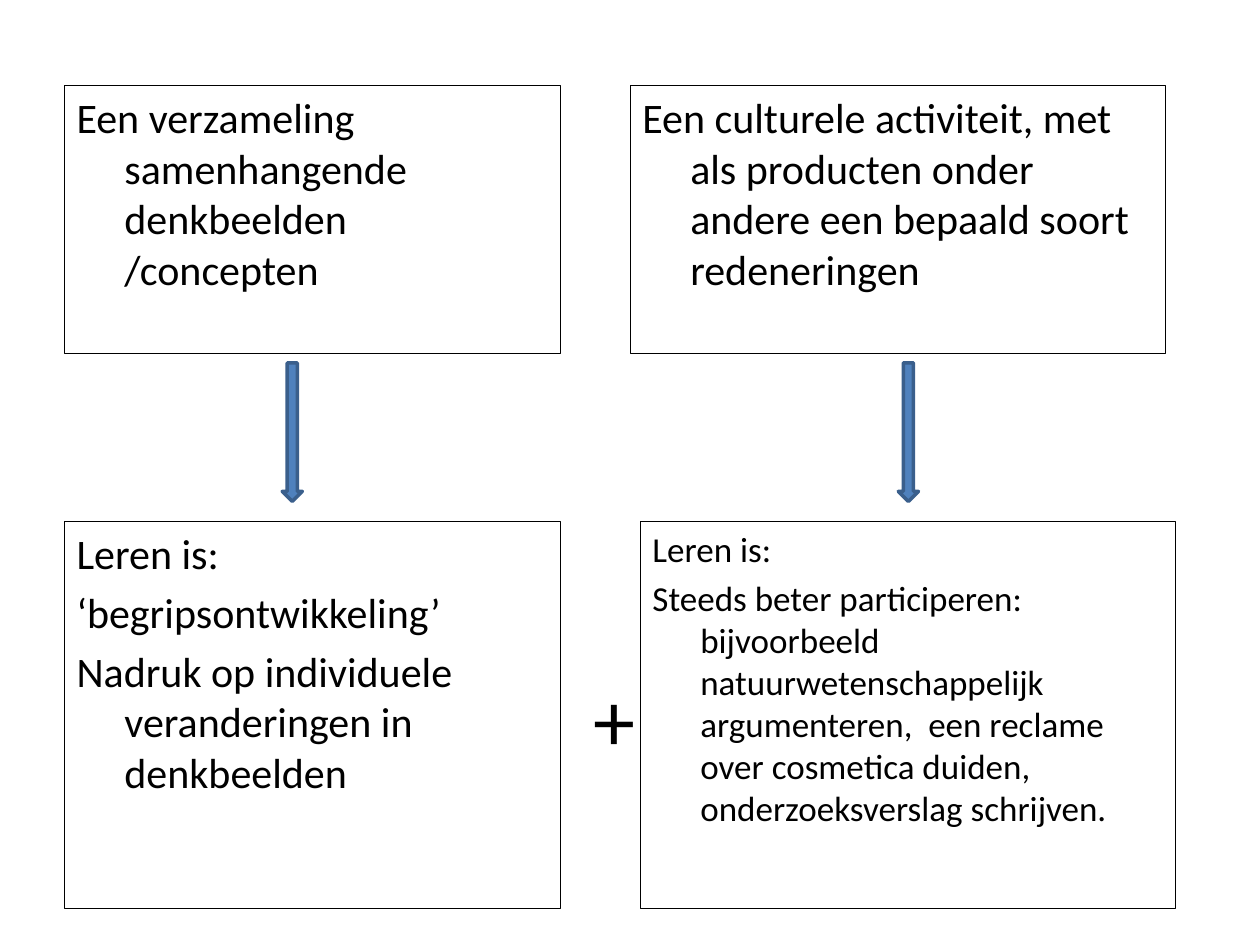
from pptx import Presentation
from pptx.dml.color import RGBColor
from pptx.enum import shapes, text
from pptx.util import Inches, Pt

COLORS = {"ink": "000000", "arrow": "4F81BD", "arrow_edge": "3A5F8C"}
FONT = "Calibri"
HANGING = 0.38

ROWS = {"view": (0.68, 2.13), "learning": (4.14, 3.07)}
STATEMENTS = [
    ("view", 0.51, 3.94, 24,
     ["Een verzameling samenhangende denkbeelden /concepten"]),
    ("view", 5, 4.25, 24,
     ["Een culturele activiteit, met als producten onder andere een bepaald "
      "soort redeneringen"]),
    ("learning", 0.51, 3.94, 24,
     ["Leren is:", "‘begripsontwikkeling’",
      "Nadruk op individuele veranderingen in denkbeelden"]),
    ("learning", 5.08, 4.25, 20,
     ["Leren is:",
      "Steeds beter participeren: bijvoorbeeld natuurwetenschappelijk "
      "argumenteren,  een reclame over cosmetica duiden, "
      "onderzoeksverslag schrijven."]),
]
ARROW_LEFTS = [2.24, 7.13]


def color(name):
    return RGBColor.from_string(COLORS[name])


def write(part, paragraphs, size, hanging=0, space_before=0):
    frame = part.text_frame
    frame.word_wrap = True
    frame.vertical_anchor = text.MSO_ANCHOR.TOP
    for index, words in enumerate(paragraphs):
        paragraph = frame.add_paragraph() if index else frame.paragraphs[0]
        paragraph.alignment = text.PP_ALIGN.LEFT
        paragraph.space_before = Pt(space_before)
        if hanging:
            properties = paragraph._p.get_or_add_pPr()
            properties.set("marL", str(Inches(hanging)))
            properties.set("indent", str(-Inches(hanging)))
        run = paragraph.add_run()
        run.text = words
        run.font.name = FONT
        run.font.size = Pt(size)
        run.font.color.rgb = color("ink")


def add_outlined(slide, preset, place, edge, width, fill=None):
    outlined = slide.shapes.add_shape(preset, *map(Inches, place))
    outlined.shadow.inherit = False
    if fill:
        outlined.fill.solid()
        outlined.fill.fore_color.rgb = color(fill)
    else:
        outlined.fill.background()
    outlined.line.color.rgb = color(edge)
    outlined.line.width = Pt(width)
    return outlined


def main():
    deck = Presentation()
    deck.slide_width, deck.slide_height = Inches(10), Inches(7.5)
    slide = deck.slides.add_slide(deck.slide_layouts[6])

    for row, left, width, size, paragraphs in STATEMENTS:
        top, height = ROWS[row]
        statement = add_outlined(slide, shapes.MSO_SHAPE.RECTANGLE,
                                 (left, top, width, height), "ink", 0.5)
        write(statement, paragraphs, size, hanging=HANGING,
              space_before=size * 0.2)

    for left in ARROW_LEFTS:
        add_outlined(slide, shapes.MSO_SHAPE.DOWN_ARROW,
                     (left, 2.88, 0.16, 1.1), "arrow_edge", 2, fill="arrow")

    plus = slide.shapes.add_textbox(*map(Inches, (4.61, 5.25, 0.79, 0.91)))
    write(plus, ["+"], 48)
    plus.text_frame.auto_size = text.MSO_AUTO_SIZE.SHAPE_TO_FIT_TEXT

    deck.save("out.pptx")


if __name__ == "__main__":
    main()
